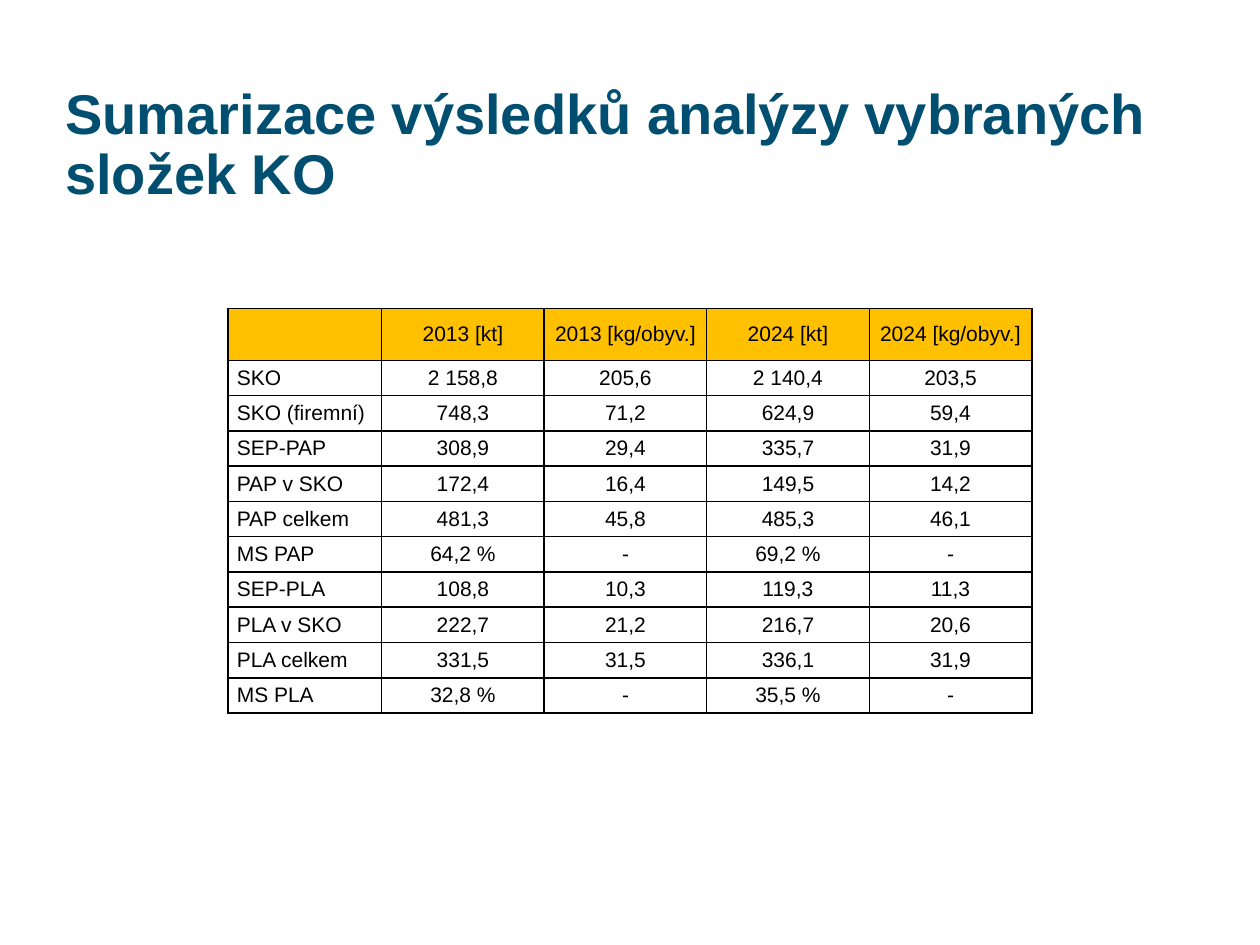
from lxml.etree import SubElement
from pptx import Presentation
from pptx.dml.color import RGBColor
from pptx.enum.text import MSO_ANCHOR, PP_ALIGN
from pptx.oxml.ns import qn
from pptx.util import Inches, Pt

TEAL = RGBColor(0x00, 0x4F, 0x71)
AMBER = RGBColor(0xFF, 0xC0, 0x00)
BLACK = RGBColor(0x00, 0x00, 0x00)

TITLE = "Sumarizace výsledků analýzy vybraných složek KO"
ROWS = [
    ("", "2013 [kt]", "2013 [kg/obyv.]", "2024 [kt]", "2024 [kg/obyv.]"),
    ("SKO", "2 158,8", "205,6", "2 140,4", "203,5"),
    ("SKO (firemní)", "748,3", "71,2", "624,9", "59,4"),
    ("SEP-PAP", "308,9", "29,4", "335,7", "31,9"),
    ("PAP v SKO", "172,4", "16,4", "149,5", "14,2"),
    ("PAP celkem", "481,3", "45,8", "485,3", "46,1"),
    ("MS PAP", "64,2 %", "-", "69,2 %", "-"),
    ("SEP-PLA", "108,8", "10,3", "119,3", "11,3"),
    ("PLA v SKO", "222,7", "21,2", "216,7", "20,6"),
    ("PLA celkem", "331,5", "31,5", "336,1", "31,9"),
    ("MS PLA", "32,8 %", "-", "35,5 %", "-"),
]
COLUMN_WIDTHS = [1.22] + [1.29] * 4
ROW_HEIGHTS = [0.41] + [0.2] * 10


class SlideBuilder:
    """Hold the text style and the current slide, and add elements to it."""

    font_name = "Arial"

    def __init__(self, slide):
        self.slide = slide

    def style(self, paragraph, size, color, bold=False):
        font = paragraph.font
        font.name, font.size, font.bold = self.font_name, Pt(size), bold
        font.color.rgb = color

    def title(self, text, left, top, width, height):
        shape = self.slide.shapes.add_textbox(
            Inches(left), Inches(top), Inches(width), Inches(height))
        frame = shape.text_frame
        frame.word_wrap = True
        frame.vertical_anchor = MSO_ANCHOR.MIDDLE
        paragraph = frame.paragraphs[0]
        paragraph.text = text
        paragraph.line_spacing = 0.9
        self.style(paragraph, 32, TEAL, bold=True)

    def border(self, cell):
        properties = cell._tc.get_or_add_tcPr()
        for side in ("a:lnL", "a:lnR", "a:lnT", "a:lnB"):
            line = SubElement(properties, qn(side), w=str(Pt(1)))
            fill = SubElement(line, qn("a:solidFill"))
            SubElement(fill, qn("a:srgbClr"), val=str(BLACK))

    def cell(self, cell, text, is_header, is_label):
        self.border(cell)
        if is_header:
            cell.fill.solid()
            cell.fill.fore_color.rgb = AMBER
        else:
            cell.fill.background()
        cell.margin_left = cell.margin_right = Inches(0.07)
        cell.margin_top = cell.margin_bottom = Inches(0.04)
        cell.vertical_anchor = MSO_ANCHOR.MIDDLE
        paragraph = cell.text_frame.paragraphs[0]
        paragraph.text = text
        paragraph.alignment = PP_ALIGN.LEFT if is_label else PP_ALIGN.CENTER
        self.style(paragraph, 12, BLACK)

    def table(self, rows, left, top, column_widths, row_heights, height):
        shape = self.slide.shapes.add_table(
            len(rows), len(column_widths), Inches(left), Inches(top),
            Inches(sum(column_widths)), Inches(height))
        table = shape.table
        table.first_row = table.horz_banding = False
        for column, column_width in zip(table.columns, column_widths):
            column.width = Inches(column_width)
        for row, row_height in zip(table.rows, row_heights):
            row.height = Inches(row_height)
        shape.height = Inches(height)
        for row_index, texts in enumerate(rows):
            for column_index, text in enumerate(texts):
                self.cell(table.cell(row_index, column_index), text,
                          row_index == 0, column_index == 0)


def main():
    presentation = Presentation()
    presentation.slide_width = Inches(10)
    presentation.slide_height = Inches(7.5)
    slide = presentation.slides.add_slide(presentation.slide_layouts[6])
    builder = SlideBuilder(slide)
    builder.title(TITLE, 0.42, 0.5, 9.24, 1.32)
    builder.table(ROWS, 1.81, 2.45, COLUMN_WIDTHS, ROW_HEIGHTS, 3.2)
    presentation.save("out.pptx")


if __name__ == "__main__":
    main()
